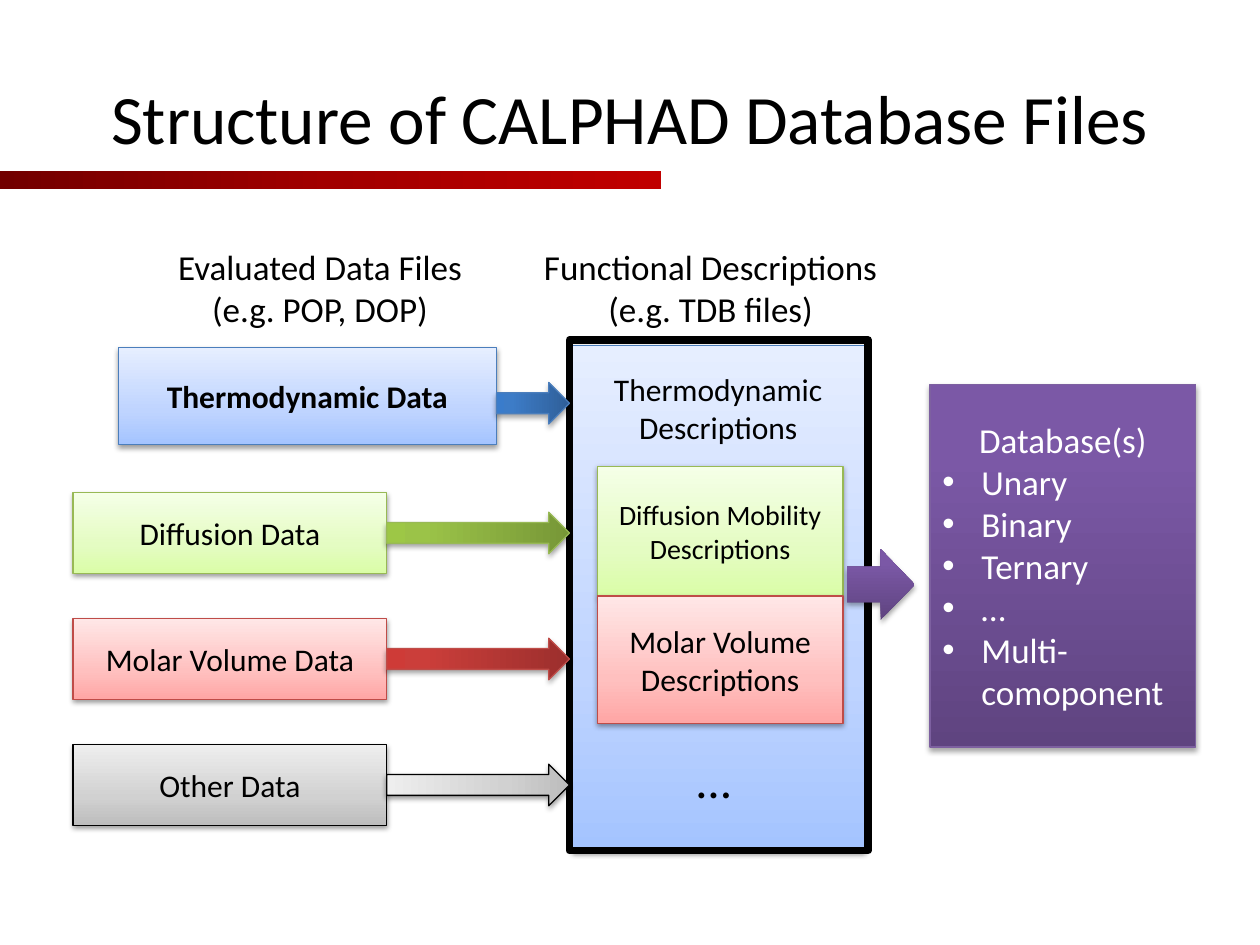
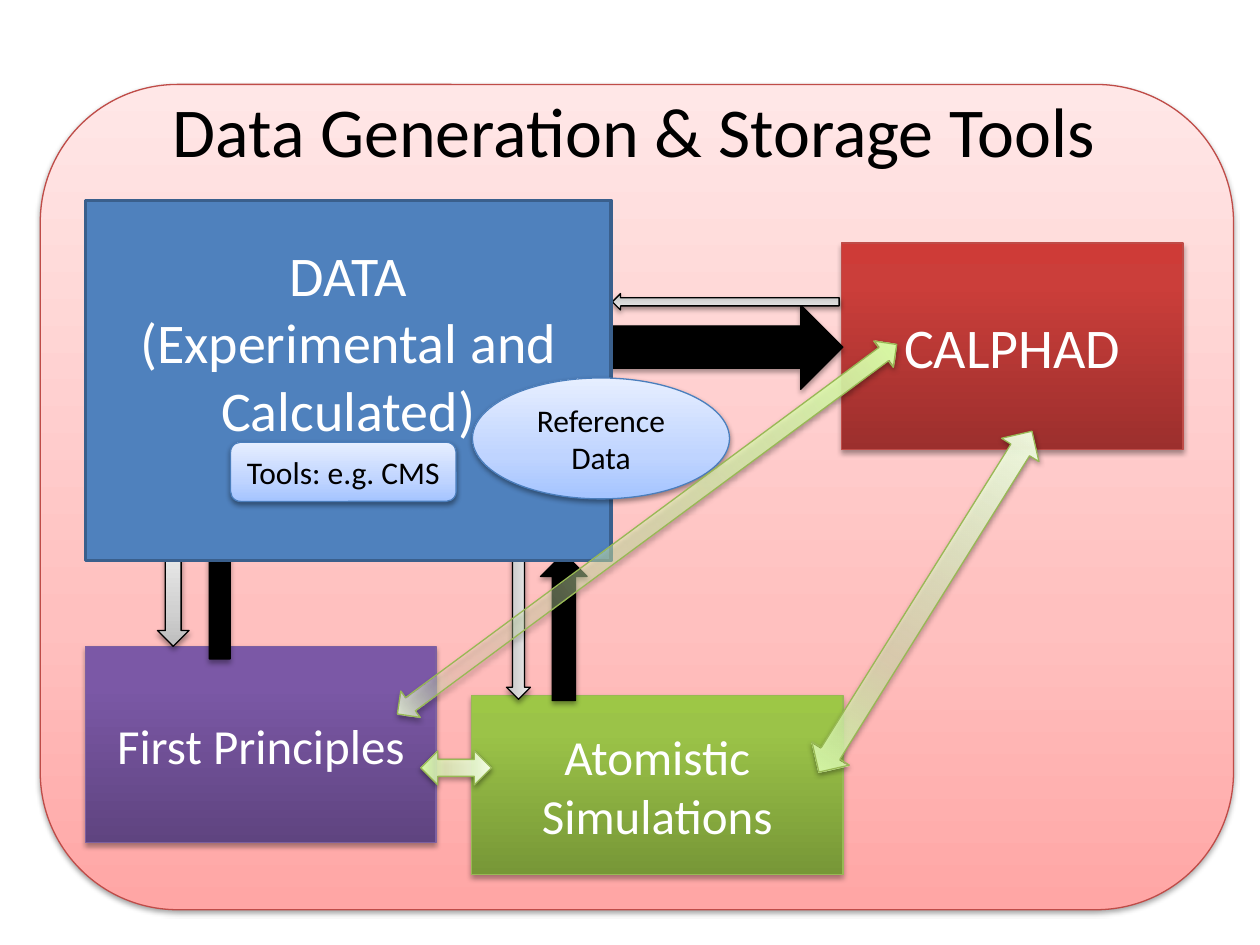
"""Build two slides on CALPHAD database files and data tools."""
from dataclasses import dataclass
from typing import NamedTuple

import pptx
import pptx.dml.color
import pptx.enum.shapes
import pptx.enum.text
import pptx.oxml
import pptx.oxml.ns
import pptx.util
from pptx.util import Inches

KIND = pptx.enum.shapes.MSO_SHAPE
ANCHOR = pptx.enum.text.MSO_ANCHOR
ALIGN = pptx.enum.text.PP_ALIGN
FONT = "Calibri"
HEX = {
    "black": "000000", "white": "FFFFFF", "data": "4F81BD", "edge": "3A5F8C",
    "blue": "4B7EBC", "green": "98B955", "red": "BF4C48", "purple": "7D60A0",
    "sky low": "A4C4FF", "sky mid": "BFD4FF", "sky top": "E6EEFF",
    "lime low": "DAFDA7", "lime mid": "E4FCC2", "lime top": "F5FFE7",
    "pink low": "FFA6A5", "pink mid": "FFC0BF", "pink top": "FFE7E7",
    "grey low": "BDBDBD", "grey mid": "D1D1D1", "grey top": "EEEEEE",
    "blue low": "2F5F99", "blue mid": "3D7CC7", "blue top": "3A7CCB",
    "green low": "779737", "green mid": "9BC348", "green top": "9DC746",
    "red low": "9C2F2D", "red mid": "CB3E3A", "red top": "CE3B37",
    "purple low": "5F4480", "purple mid": "7B58A6", "purple top": "7C57A8",
    "bar low": "720000", "bar mid": "A20000", "bar top": "C00000",
}


class Shade(NamedTuple):
    alpha: int
    dist: float


PALE, DEEP = Shade(38, 1.6), Shade(35, 1.8)


@dataclass(frozen=True)
class Tone:
    fill: str = ""
    line: str = ""
    mid: int = 0
    shade: Shade | None = None
    angle: int = 90
    clear: int = 100
    width: float = 0.75


SKY = Tone("sky", "blue", 35, PALE)
LIME = Tone("lime", "green", 35, PALE)
PINK = Tone("pink", "red", 35, PALE)
GREY = Tone("grey", "black", 35, PALE)
BLUE = Tone("blue", "blue", 80, DEEP)
GREEN = Tone("green", "green", 80, DEEP)
RED = Tone("red", "red", 80, DEEP)
PURPLE = Tone("purple", "purple", 80, DEEP)
PLUM = Tone("purple", "", 80, DEEP)
BLACK = Tone("black", "black", 0, DEEP)
FRAME = Tone("", "black", width=4.5)
BAR = Tone("bar", "", 50, angle=0)
DATA = Tone("data", "edge", width=2)


@dataclass(frozen=True)
class Box:
    left: float
    top: float
    width: float
    height: float
    tone: Tone
    lines: tuple[str, ...] = ()
    size: float = 18
    ink: str = "black"
    kind: KIND = KIND.RECTANGLE
    turn: float = 0
    bold: bool = False
    inset: float = 0


class Label(NamedTuple):
    left: float
    top: float
    width: float
    height: float
    lines: tuple[str, ...]
    size: float


class Row(NamedTuple):
    text: str
    pale: Tone
    deep: Tone


def rgb(name: str) -> pptx.dml.color.RGBColor:
    return pptx.dml.color.RGBColor.from_string(HEX[name])


def add_tag(parent, tag: str, **attrs):
    node = parent.makeelement(pptx.oxml.ns.qn(tag), {k: str(v) for k, v in attrs.items()})
    parent.append(node)
    return node


def write(frame, lines: tuple[str, ...], size: float, ink: str = "black", bold: bool = False) -> None:
    for i, text in enumerate(lines):
        para = frame.paragraphs[0] if i == 0 else frame.add_paragraph()
        para.alignment = ALIGN.CENTER
        if text.startswith("•"):
            para.alignment = ALIGN.LEFT
            props = para._p.get_or_add_pPr()
            props.set("marL", str(Inches(0.31)))
            props.set("indent", str(-Inches(0.31)))
            add_tag(props, "a:buFont", typeface="Arial")
            add_tag(props, "a:buChar", char="•")
        run = para.add_run()
        run.text = text.removeprefix("•")
        run.font.name = FONT
        run.font.size = pptx.util.Pt(size)
        run.font.bold = bold
        run.font.color.rgb = rgb(ink)


def paint(shape, tone: Tone) -> None:
    fill = shape.fill
    if not tone.fill:
        fill.background()
    elif not tone.mid:
        fill.solid()
        fill.fore_color.rgb = rgb(tone.fill)
    else:
        fill.gradient()
        fill.gradient_angle = tone.angle
        stops = shape.element.spPr.find(".//" + pptx.oxml.ns.qn("a:gsLst"))
        for old in list(stops):
            stops.remove(old)
        for place, part in ((0, "low"), (tone.mid, "mid"), (100, "top")):
            stop = add_tag(stops, "a:gs", pos=place * 1000)
            tint = add_tag(stop, "a:srgbClr", val=HEX[f"{tone.fill} {part}"])
            if part == "mid" and tone.clear < 100:
                add_tag(tint, "a:alpha", val=tone.clear * 1000)
    if tone.line:
        shape.line.color.rgb = rgb(tone.line)
        shape.line.width = pptx.util.Pt(tone.width)
    else:
        shape.line.fill.background()
    shape.shadow.inherit = False
    if tone.shade:
        effects = shape.element.spPr.find(pptx.oxml.ns.qn("a:effectLst"))
        cast = add_tag(effects, "a:outerShdw", blurRad=pptx.util.Pt(3.1),
                       dist=pptx.util.Pt(tone.shade.dist), dir=5400000, rotWithShape=0)
        tint = add_tag(cast, "a:srgbClr", val=HEX["black"])
        add_tag(tint, "a:alpha", val=tone.shade.alpha * 1000)


def draw(slide, box: Box):
    shape = slide.shapes.add_shape(box.kind, Inches(box.left), Inches(box.top),
                                   Inches(box.width), Inches(box.height))
    shape.rotation = box.turn
    paint(shape, box.tone)
    if box.lines:
        frame = shape.text_frame
        frame.word_wrap = True
        frame.vertical_anchor = ANCHOR.TOP if box.inset else ANCHOR.MIDDLE
        if box.inset:
            frame.margin_top = Inches(box.inset)
        write(frame, box.lines, box.size, box.ink, box.bold)
    return shape


def draw_feed(slide, left: float, mid: float, span: float, tone: Tone) -> None:
    thick = 0.33
    draw(slide, Box(left + (span - thick) / 2, mid - span / 2, thick, span, tone,
                    kind=KIND.DOWN_ARROW, turn=270))


def draw_label(slide, label: Label) -> None:
    shape = slide.shapes.add_textbox(*map(Inches, label[:4]))
    shape.text_frame.word_wrap = False
    shape.text_frame.auto_size = pptx.enum.text.MSO_AUTO_SIZE.SHAPE_TO_FIT_TEXT
    write(shape.text_frame, label.lines, label.size)


def add_slide(deck, text: str, left: float, top: float, size: float):
    slide = deck.slides.add_slide(deck.slide_layouts[5])
    title = slide.shapes.title
    title.left, title.top = Inches(left), Inches(top)
    title.width, title.height = Inches(9), Inches(1.25)
    title.text_frame.vertical_anchor = ANCHOR.MIDDLE
    write(title.text_frame, (text,), size)
    return slide


def build_files(deck) -> None:
    slide = add_slide(deck, "Structure of CALPHAD Database Files", 0.5, 0.3, 39.6)
    for label in (
        Label(4.2, 1.9, 2.88, 0.77, ("Functional Descriptions", "(e.g. TDB files)"), 20),
        Label(1.3, 1.9, 2.48, 0.77, ("Evaluated Data Files", "(e.g. POP, DOP)"), 20),
    ):
        draw_label(slide, label)
    bullets = ("•Unary", "•Binary", "•Ternary", "•…", "•Multi-comoponent")
    for box in (
        Box(4.54, 2.74, 2.32, 4.01, SKY, ("Thermodynamic", "Descriptions"), inset=0.2),
        Box(4.52, 2.7, 2.37, 4.05, FRAME),
        Box(0.94, 2.76, 3, 0.77, SKY, ("Thermodynamic Data",), bold=True),
        Box(7.38, 3.05, 2.11, 2.88, PURPLE, ("Database(s)", *bullets), 20, "white"),
        Box(4.74, 3.7, 1.95, 1.03, LIME, ("Diffusion Mobility Descriptions",), 16),
        Box(4.74, 4.73, 1.95, 1.01, PINK, ("Molar Volume", "Descriptions")),
        Box(6.72, 4.36, 0.54, 0.56, PLUM, kind=KIND.RIGHT_ARROW),
        Box(0, 1.36, 5.25, 0.14, BAR),
    ):
        draw(slide, box)
    draw_feed(slide, 3.94, 3.2, 0.58, BLUE)
    rows = (Row("Diffusion Data", LIME, GREEN), Row("Molar Volume Data", PINK, RED),
            Row("Other Data", GREY, GREY))
    for i, row in enumerate(rows):
        top = 3.91 + i
        draw(slide, Box(0.58, top, 2.49, 0.64, row.pale, (row.text,)))
        draw_feed(slide, 3.07, top + 0.32, 1.45, row.deep)
    draw_label(slide, Label(5.4, 5.9, 0.53, 0.66, ("…",), 28))


def build_tools(deck) -> None:
    slide = add_slide(deck, "Data Generation & Storage Tools", 0.53, 0.4, 40)
    panel = draw(slide, Box(0.32, 0.67, 9.47, 6.55, PINK, kind=KIND.ROUNDED_RECTANGLE))
    slide.shapes.title.element.addprevious(panel.element)
    right, both = KIND.RIGHT_ARROW, KIND.LEFT_RIGHT_ARROW
    for box in (
        Box(0.68, 5.13, 2.78, 1.56, PURPLE, ("First Principles",), 28, "white"),
        Box(6.68, 1.93, 2.71, 1.64, RED, ("CALPHAD",), 32, "white"),
        Box(3.74, 5.52, 2.95, 1.42, GREEN, ("Atomistic Simulations",), 28, "white"),
        Box(1.25, 4.3, 0.25, 0.83, GREY, kind=KIND.DOWN_ARROW),
        Box(1.58, 4.2, 0.33, 1.03, BLACK, kind=KIND.UP_ARROW),
        Box(4.83, 2.42, 1.86, 0.67, BLACK, kind=right),
        Box(3.54, 4.88, 1.15, 0.19, GREY, kind=right, turn=90),
        Box(3.89, 4.79, 1.17, 0.37, BLACK, kind=right, turn=270),
        Box(4.86, 2.33, 1.8, 0.13, GREY, kind=right, turn=180),
        Box(0.68, 1.59, 4.17, 2.86, DATA, ("DATA", "(Experimental and Calculated)"),
            32, "white", inset=0.32),
        Box(1.83, 3.51, 1.79, 0.47, SKY, ("Tools: e.g. CMS",), kind=KIND.ROUNDED_RECTANGLE),
        Box(3.75, 3, 2.04, 0.96, SKY, ("Reference Data",), kind=KIND.OVAL),
        Box(3.34, 5.96, 0.56, 0.27, Tone("lime", "green", 35, PALE, 0, 76), kind=both),
        Box(5.75, 4.6, 3.19, 0.35, Tone("lime", "green", 35, PALE, 0, 49), kind=both, turn=302),
        Box(2.67, 4.07, 4.93, 0.26, Tone("lime", "green", 87, PALE, 0, 19), kind=both, turn=143.5),
    ):
        draw(slide, box)


def main() -> None:
    deck = pptx.Presentation()
    deck.slide_width, deck.slide_height = Inches(10), Inches(7.5)
    build_files(deck)
    build_tools(deck)
    deck.save("out.pptx")


if __name__ == "__main__":
    main()
